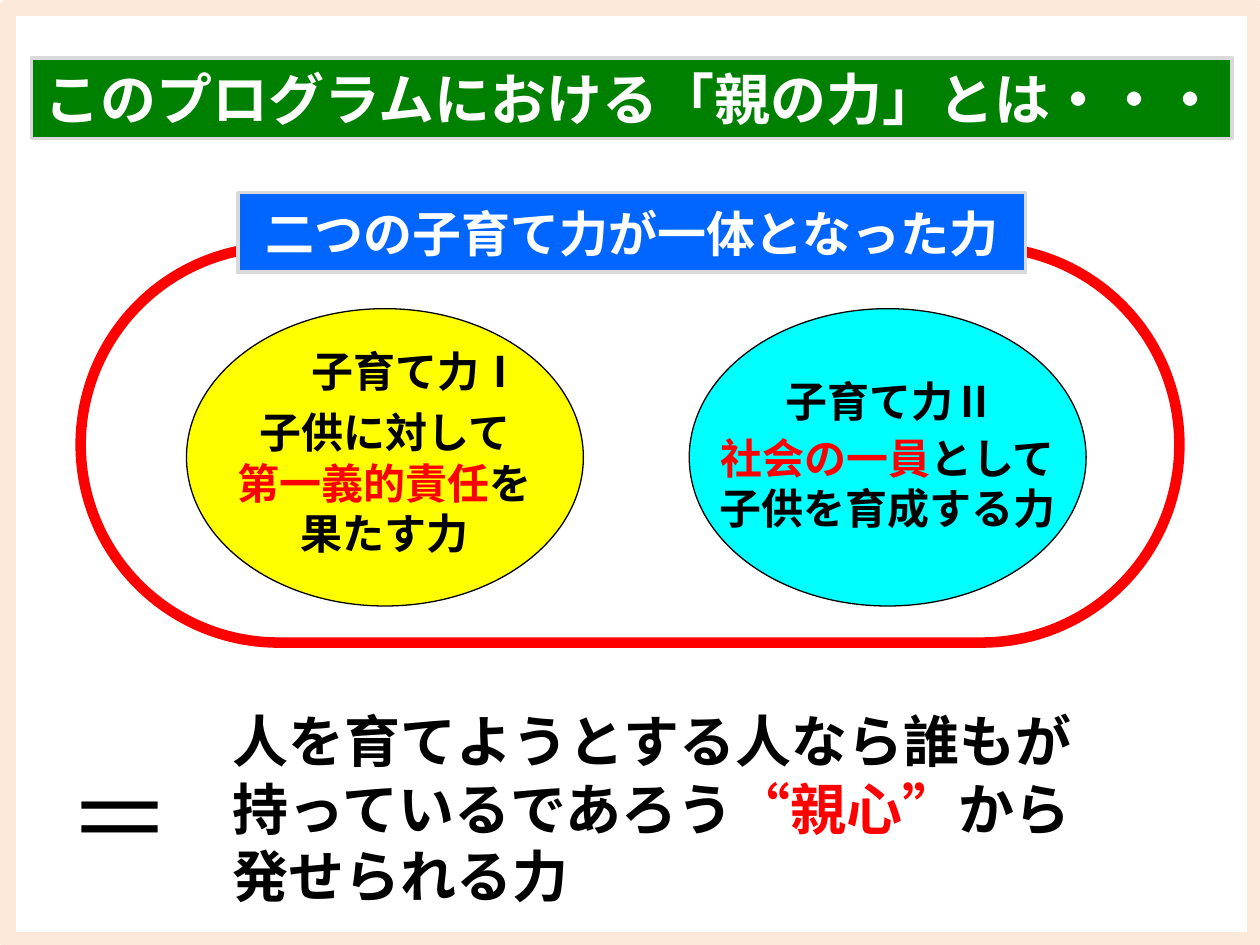
from pptx import Presentation
from pptx.dml.color import RGBColor
from pptx.enum.shapes import MSO_SHAPE
from pptx.enum.text import MSO_ANCHOR, MSO_AUTO_SIZE, PP_ALIGN
from pptx.oxml.ns import qn
from pptx.util import Inches, Pt

RECT, ELLIPSE = MSO_SHAPE.RECTANGLE, MSO_SHAPE.OVAL
PILL, BEVEL = MSO_SHAPE.ROUNDED_RECTANGLE, MSO_SHAPE.BEVEL
LEFT, CENTER, MIDDLE = PP_ALIGN.LEFT, PP_ALIGN.CENTER, MSO_ANCHOR.MIDDLE
NO_FIT = MSO_AUTO_SIZE.NONE
FONT = "Noto Sans CJK JP"
COLORS = {
    "black": "000000", "white": "FFFFFF", "red": "FF0000", "green": "008000",
    "blue": "0066FF", "yellow": "FFFF00", "cyan": "00FFFF",
    "gray": "D9D9D9", "peach": "FDE9D9",
}


def rgb(name):
    """Return the named colour."""
    return RGBColor.from_string(COLORS[name])


def write(sp, lines, size, color="black", bold=True, align=CENTER, wrap=True):
    """Write lines, each a list of (text, colour) runs or a plain string."""
    tf = sp.text_frame
    tf.auto_size, tf.word_wrap, tf.vertical_anchor = NO_FIT, wrap, MIDDLE
    for i, line in enumerate(lines):
        p = tf.paragraphs[0] if i == 0 else tf.add_paragraph()
        p.alignment = align
        for text, run_color in [(line, color)] if isinstance(line, str) else line:
            r = p.add_run()
            r.text = text
            r.font.name, r.font.size, r.font.bold = FONT, Pt(size), bold
            r.font.color.rgb = rgb(run_color)
            ea = r.font._element.makeelement(qn("a:ea"), {"typeface": FONT})
            r.font._element.find(qn("a:latin")).addnext(ea)


def paint(sp, fill, line, width):
    """Set the fill and outline of a shape."""
    if fill:
        sp.fill.solid()
        sp.fill.fore_color.rgb = rgb(fill)
    else:
        sp.fill.background()
    sp.line.color.rgb = rgb(line)
    sp.line.width = Pt(width)


def add_shape(slide, kind, box, fill, line, width):
    """Add a painted preset shape without shadow."""
    sp = slide.shapes.add_shape(kind, *map(Inches, box))
    sp.shadow.inherit = False
    paint(sp, fill, line, width)
    return sp


def add_text(slide, box, lines, size, **style):
    """Add a text box."""
    write(slide.shapes.add_textbox(*map(Inches, box)), lines, size, **style)


def add_title(slide, box, text):
    """Turn the title placeholder into a one-line heading bar."""
    sp = slide.shapes.title
    sp.left, sp.top, sp.width, sp.height = map(Inches, box)
    paint(sp, "green", "gray", 2)
    tf = sp.text_frame
    tf.margin_left = tf.margin_right = Inches(0.02)
    tf.margin_top = tf.margin_bottom = 0
    write(sp, [text], 32, "white")


def add_power(slide, left, fill, heading, heading_at, lines):
    """Add an ellipse with a heading and its description below."""
    sp = add_shape(slide, ELLIPSE, (left, 2.45, 3.15, 2.36), fill, "black", 0.75)
    sp.text_frame.margin_top = Inches(0.45)
    write(sp, lines, 24, wrap=False)
    add_text(slide, (*heading_at, 1.75, 0.58), [heading], 24, wrap=False)


def main():
    """Build the slide."""
    prs = Presentation()
    prs.slide_width, prs.slide_height = Inches(10), Inches(7.5)
    slide = prs.slides.add_slide(prs.slide_layouts[5])
    add_title(slide, (0.25, 0.46, 9.53, 0.64),
              "このプログラムにおける「親の力」とは・・・")
    add_shape(slide, RECT, (0.06, 0.06, 9.9, 7.4), None, "peach", 9.5)

    pill = add_shape(slide, PILL, (0.64, 1.96, 8.72, 3.14), None, "red", 6)
    pill.adjustments[0] = 0.5
    banner = add_shape(slide, BEVEL, (1.89, 1.53, 6.25, 0.63), "blue", "gray", 2)
    banner.adjustments[0] = 0
    write(banner, ["二つの子育て力が一体となった力"], 28, "white")

    add_power(slide, 1.48, "yellow", "子育て力Ⅰ", (2.43, 2.65), [
        "子供に対して",
        [("第一義的責任", "red"), ("を", "black")],
        "果たす力",
    ])
    add_power(slide, 5.47, "cyan", "子育て力Ⅱ", (6.19, 2.89), [
        [("社会の一員", "red"), ("として", "black")],
        "子供を育成する力",
    ])

    add_text(slide, (0.5, 5.97, 0.91, 1), ["＝"], 60, bold=False, wrap=False)
    add_text(slide, (1.75, 5.33, 6.95, 2.16), [
        "人を育てようとする人なら誰もが",
        [("持っているであろう", "black"), ("“親心”", "red"), ("から", "black")],
        "発せられる力",
    ], 32, align=LEFT)
    prs.save("out.pptx")


if __name__ == "__main__":
    main()
